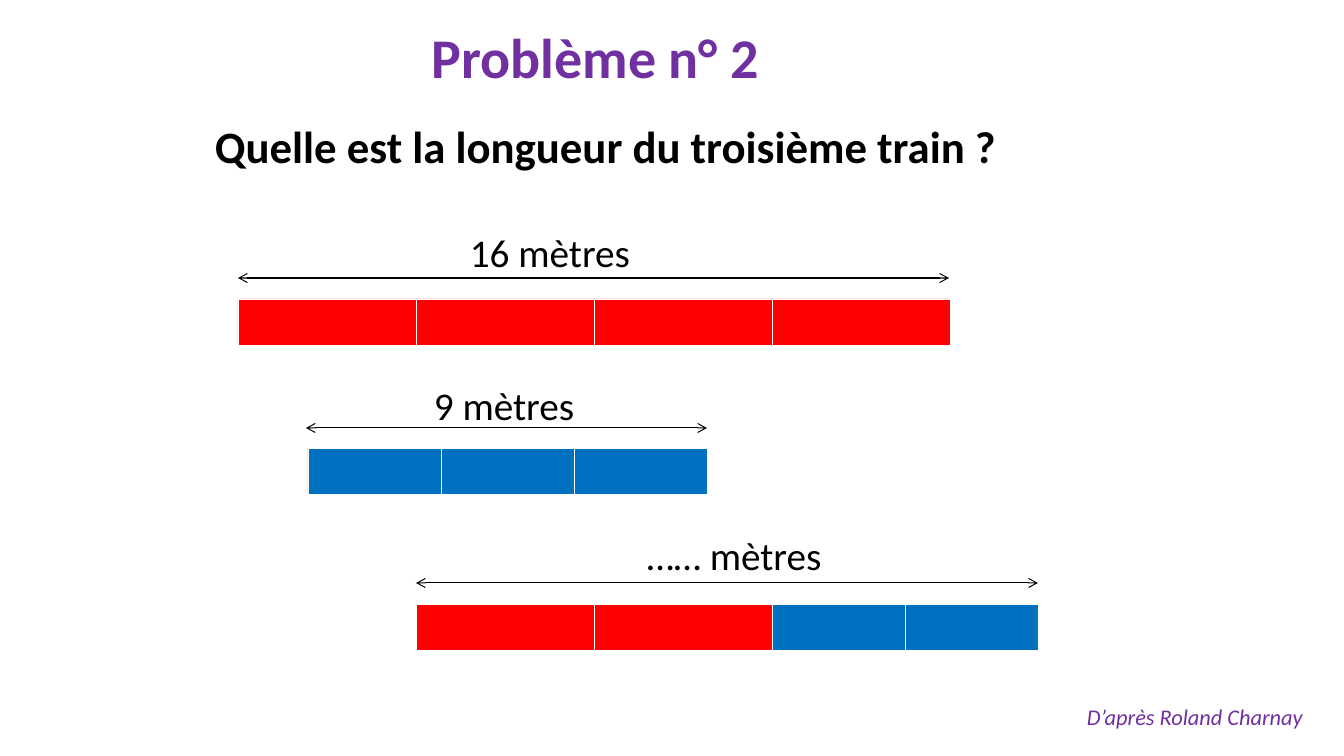
from lxml.etree import SubElement
from pptx import Presentation
from pptx.dml.color import RGBColor
from pptx.enum.shapes import MSO_CONNECTOR, MSO_SHAPE
from pptx.enum.text import MSO_ANCHOR, PP_ALIGN
from pptx.oxml.ns import qn
from pptx.util import Emu, Pt

PX = 914400 / 100.8
PURPLE = RGBColor(0x70, 0x30, 0xA0)
BLACK = RGBColor(0, 0, 0)
WHITE = RGBColor(0xFF, 0xFF, 0xFF)
RED = RGBColor(0xFF, 0, 0)
BLUE = RGBColor(0, 0x70, 0xC0)

WAGON_WIDTH = {RED: 178, BLUE: 133}
WAGON_HEIGHT = 46


def px(*lengths):
    """Turn pixel lengths into EMU."""
    return [Emu(round(length * PX)) for length in lengths]


def add_text(text, box, size, color=BLACK, bold=False, italic=False,
             align=PP_ALIGN.LEFT, anchor=MSO_ANCHOR.TOP, spacing=None, wrap=True):
    frame = slide.shapes.add_textbox(*px(*box)).text_frame
    frame.word_wrap = wrap
    frame.vertical_anchor = anchor
    paragraph = frame.paragraphs[0]
    paragraph.alignment = align
    paragraph.line_spacing = spacing
    run = paragraph.add_run()
    run.text = text
    run.font.name = "Calibri"
    run.font.size = Pt(size)
    run.font.bold = bold
    run.font.italic = italic
    run.font.color.rgb = color


presentation = Presentation()
presentation.slide_width, presentation.slide_height = px(1344, 756)
slide = presentation.slides.add_slide(presentation.slide_layouts[6])

add_text("Problème n° 2", (306, -13, 579, 146), 40, PURPLE, bold=True,
         align=PP_ALIGN.CENTER, anchor=MSO_ANCHOR.MIDDLE, spacing=0.9)
add_text("Quelle est la longueur du troisième train ?", (205, 114, 834, 65), 32, bold=True)

# wagons, left, top, arrow start, arrow end, arrow height, label, label left, label top
trains = [
    ([RED] * 4, 238, 299, 238, 949, 278, "16 mètres", 460, 223),
    ([BLUE] * 3, 308, 448, 306, 707, 428, "9 mètres", 424, 376),
    ([RED] * 2 + [BLUE] * 2, 416, 604, 416, 1038, 583, "…… mètres", 637, 526),
]
for wagons, left, top, start, end, arrow_y, label, label_left, label_top in trains:
    for color in wagons:
        width = WAGON_WIDTH[color]
        wagon = slide.shapes.add_shape(MSO_SHAPE.RECTANGLE, *px(left, top, width, WAGON_HEIGHT))
        wagon.shadow.inherit = False
        wagon.fill.solid()
        wagon.fill.fore_color.rgb = color
        wagon.line.color.rgb = WHITE
        wagon.line.width = Pt(0.5)
        left += width

    arrow = slide.shapes.add_connector(MSO_CONNECTOR.STRAIGHT, *px(start, arrow_y, end, arrow_y))
    arrow.line.color.rgb = BLACK
    arrow.line.width = Pt(0.75)
    for tag in ("a:headEnd", "a:tailEnd"):
        SubElement(arrow.line._get_or_add_ln(), qn(tag), type="arrow")
    SubElement(arrow._element.spPr, qn("a:effectLst"))

    add_text(label, (label_left, label_top, 201, 46), 28)

add_text("D’après Roland Charnay", (1077, 698, 240, 37), 16, PURPLE, italic=True, wrap=False)

presentation.save("out.pptx")
